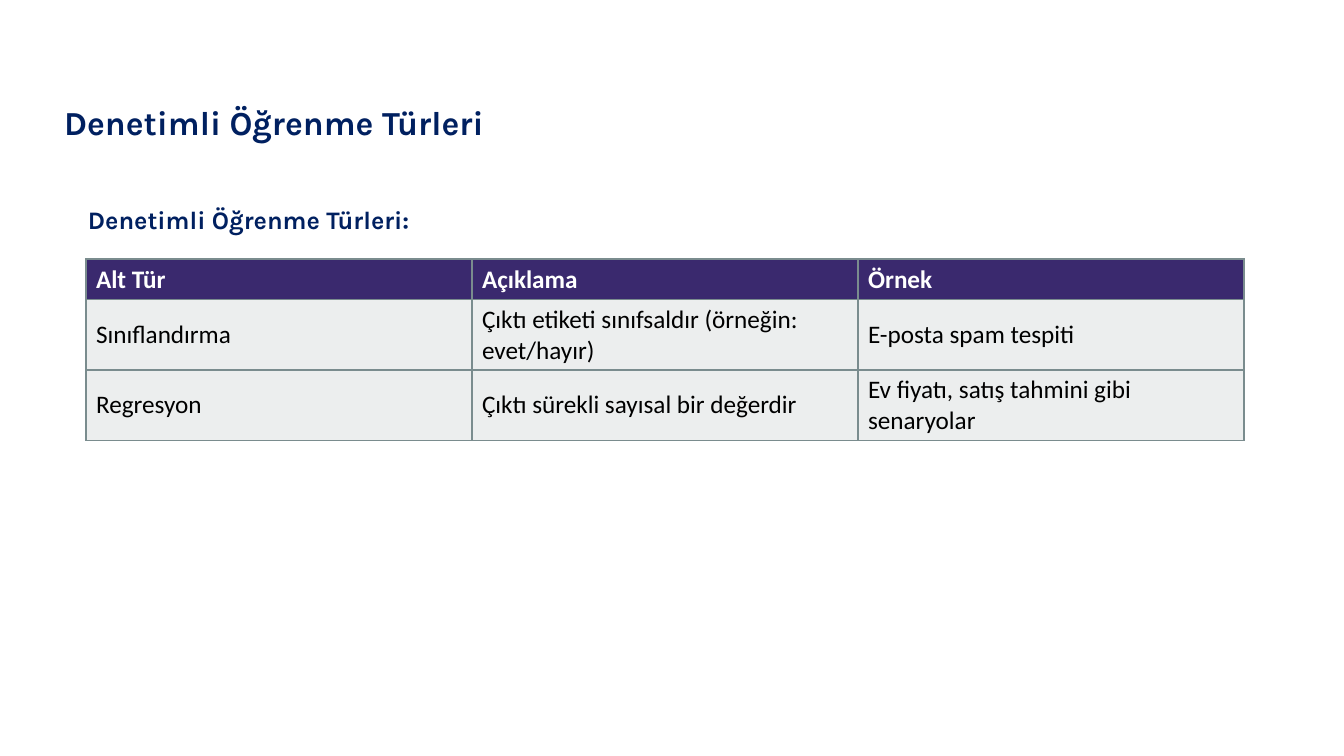
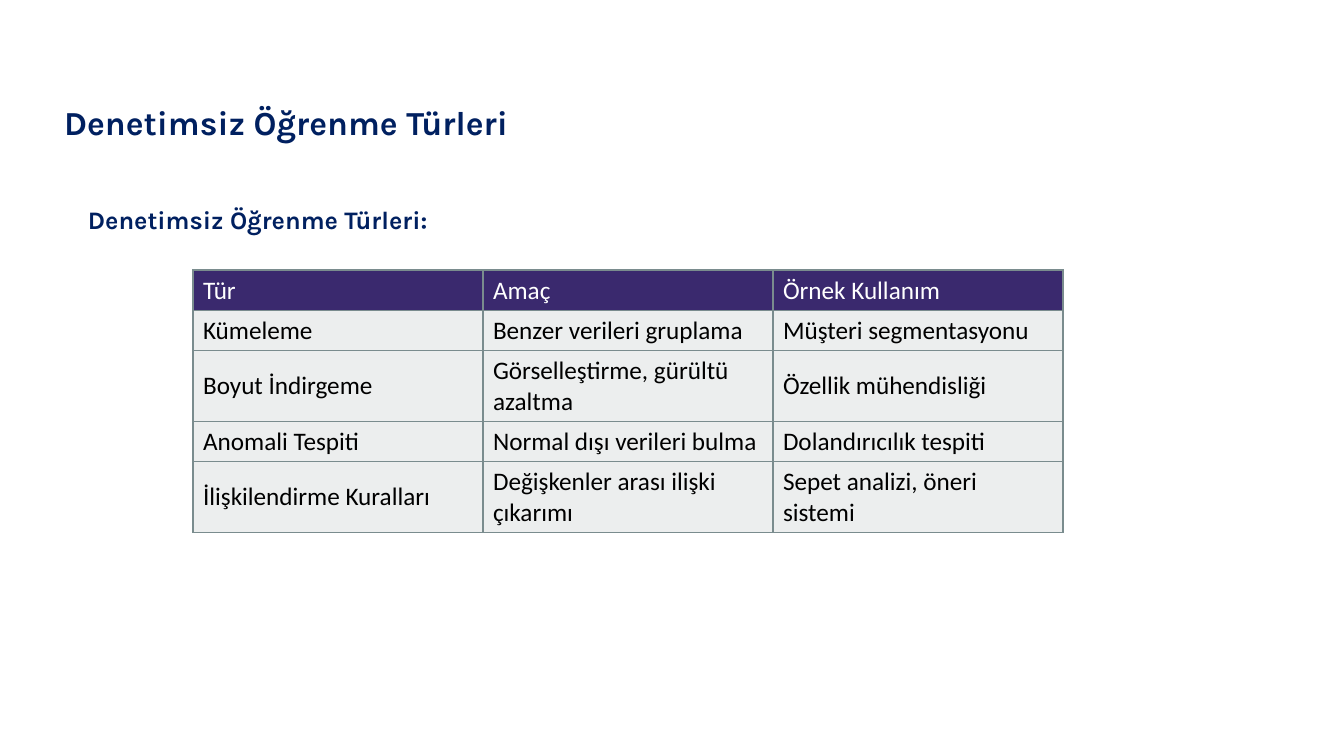
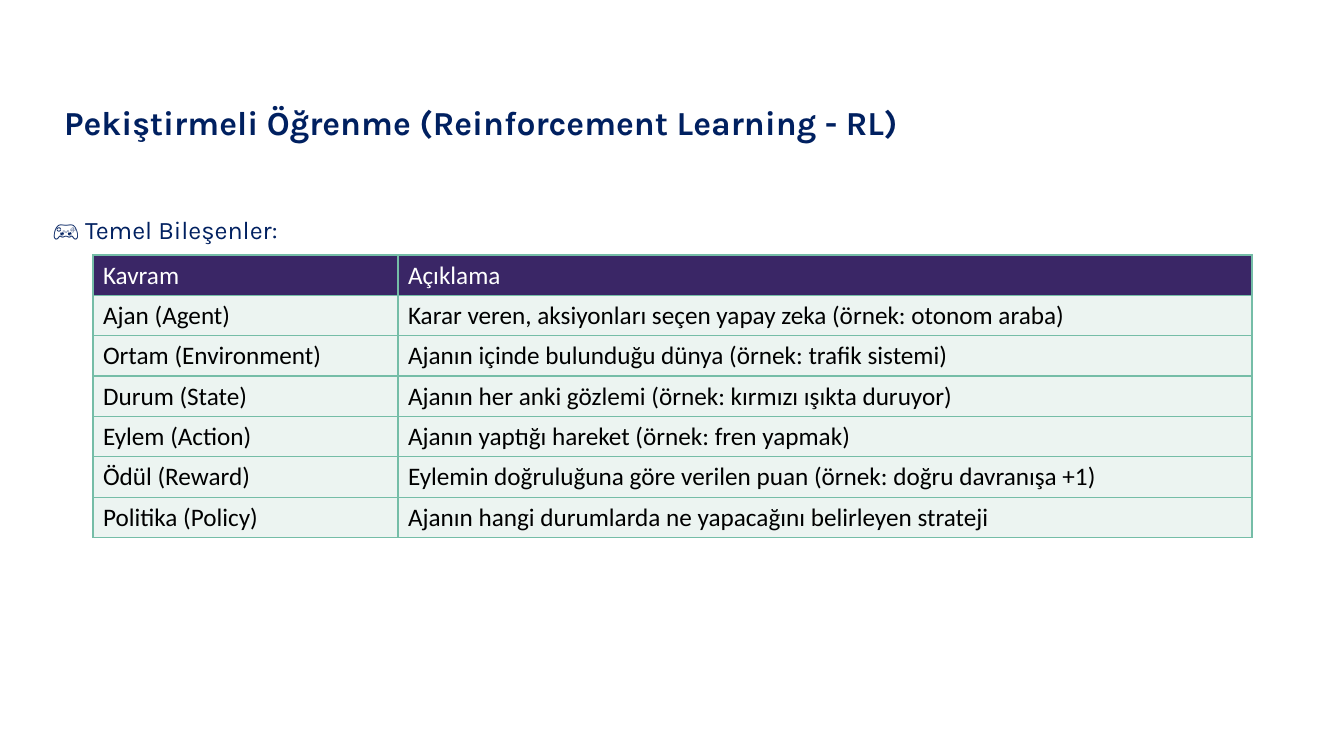
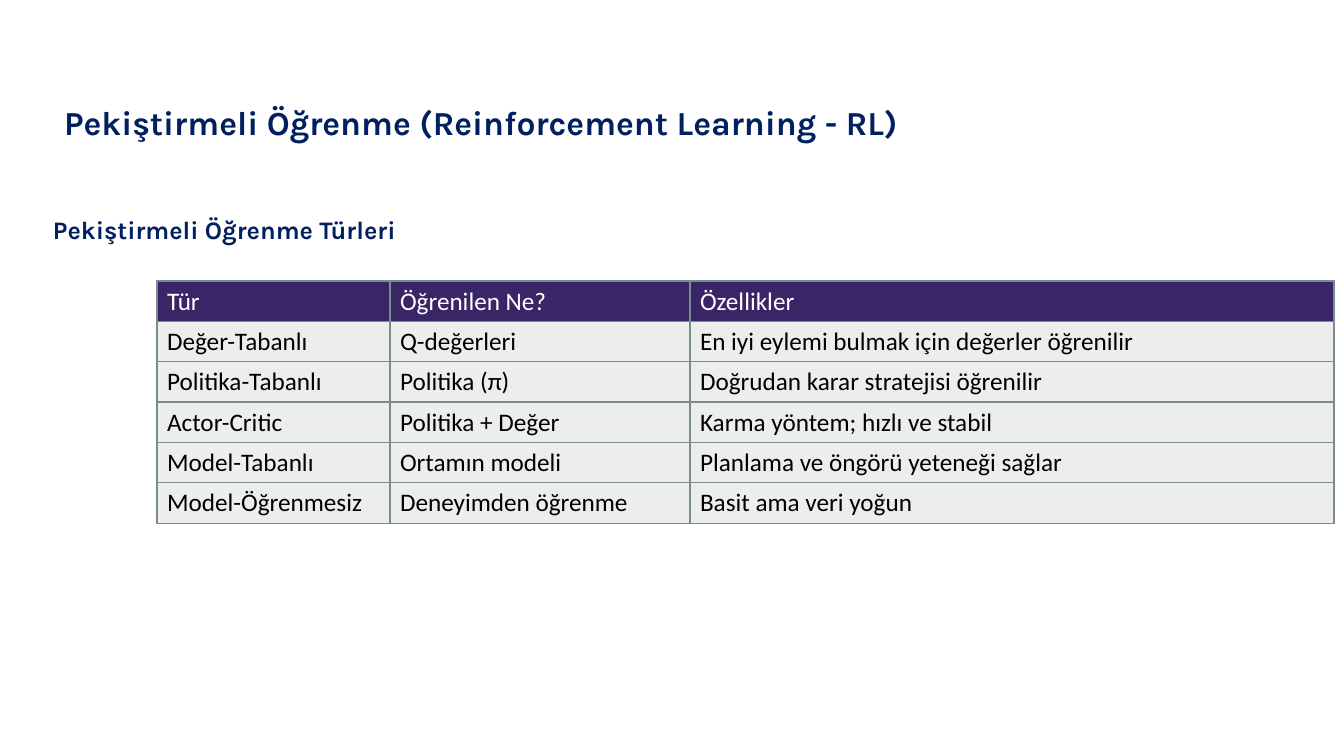
from lxml.etree import SubElement
from pptx import Presentation
from pptx.dml.color import RGBColor
from pptx.enum.text import MSO_ANCHOR as ANCHOR, MSO_AUTO_SIZE as AUTO, PP_ALIGN as ALIGN
from pptx.oxml.ns import qn
from pptx.util import Emu, Pt

NAVY, WHITE, BLACK = "002060", "FFFFFF", "000000"
INDIGO, PLUM = "3A296E", "3A2666"
GREY = ("7A8C8E", "ECEEEE")
GREEN = ("75BDA7", "ECF4F1")


def px(n):
    return Emu(round(n * 914400 / 100.8))


def rgb(value):
    return RGBColor.from_string(value)


class Deck:
    heading_font, table_font = "Karla", "Calibri"
    row_height = 40

    def __init__(self):
        self.prs = Presentation()
        self.prs.slide_width, self.prs.slide_height = px(1344), px(756)

    def style(self, p, font, size, color, bold=False):
        f = p.font
        f.name, f.size, f.bold = font, Pt(size), bold
        f.color.rgb = rgb(color)

    def place(self, shape, x, y, w, h):
        shape.left, shape.top, shape.width, shape.height = map(px, (x, y, w, h))

    def slide(self, title):
        self.s = self.prs.slides.add_slide(self.prs.slide_layouts[5])
        sp = self.s.shapes.title
        self.place(sp, 54, 81, 1256, 88)
        tf = sp.text_frame
        tf.text = title
        tf.auto_size, tf.vertical_anchor = AUTO.NONE, ANCHOR.MIDDLE
        p = tf.paragraphs[0]
        p.alignment, p.line_spacing = ALIGN.LEFT, 0.9
        self.style(p, self.heading_font, 24, NAVY, True)

    def subheading(self, text, x, y, w, h, bold=True, spacing=1.0):
        tf = self.s.shapes.add_textbox(*map(px, (x, y, w, h))).text_frame
        tf.word_wrap = True
        tf.text = text
        p = tf.paragraphs[0]
        p.line_spacing = spacing
        self.style(p, self.heading_font, 18, NAVY, bold)

    def borders(self, cell, color):
        tc_pr = cell._tc.get_or_add_tcPr()
        for side in ("a:lnL", "a:lnR", "a:lnT", "a:lnB"):
            ln = SubElement(tc_pr, qn(side), w=str(Pt(1)))
            fill = SubElement(ln, qn("a:solidFill"))
            SubElement(fill, qn("a:srgbClr"), val=color)

    def table(self, x, y, widths, rows, header_fill, theme=GREY, bold_header=False):
        line, body_fill = theme
        size = (sum(widths), self.row_height * len(rows))
        table = self.s.shapes.add_table(
            len(rows), len(widths), *map(px, (x, y, *size))).table
        table.first_row = table.horz_banding = False
        for column, width in zip(table.columns, widths):
            column.width = px(width)
        for i, row in enumerate(rows):
            header = i == 0
            for cell, text in zip(table.rows[i].cells, row):
                cell.text = text
                cell.vertical_anchor = ANCHOR.MIDDLE
                self.borders(cell, line)
                cell.fill.solid()
                cell.fill.fore_color.rgb = rgb(header_fill if header else body_fill)
                self.style(cell.text_frame.paragraphs[0], self.table_font, 18,
                           WHITE if header else BLACK, header and bold_header)


def main():
    deck = Deck()
    type_box = (78, 199, 380, 40)
    wide_box = (43, 194, 1231, 56)
    rl_title = "Pekiştirmeli Öğrenme (Reinforcement Learning - RL)"

    deck.slide("Denetimli Öğrenme Türleri")
    deck.subheading("Denetimli Öğrenme Türleri:", *type_box)
    deck.table(86, 259, [386] * 3, [
        ("Alt Tür", "Açıklama", "Örnek"),
        ("Sınıflandırma", "Çıktı etiketi sınıfsaldır (örneğin: evet/hayır)",
         "E-posta spam tespiti"),
        ("Regresyon", "Çıktı sürekli sayısal bir değerdir",
         "Ev fiyatı, satış tahmini gibi senaryolar"),
    ], INDIGO, bold_header=True)

    deck.slide("Denetimsiz Öğrenme Türleri")
    deck.subheading("Denetimsiz Öğrenme Türleri:", *type_box)
    deck.table(193, 270, [290] * 3, [
        ("Tür", "Amaç", "Örnek Kullanım"),
        ("Kümeleme", "Benzer verileri gruplama", "Müşteri segmentasyonu"),
        ("Boyut İndirgeme", "Görselleştirme, gürültü azaltma", "Özellik mühendisliği"),
        ("Anomali Tespiti", "Normal dışı verileri bulma", "Dolandırıcılık tespiti"),
        ("İlişkilendirme Kuralları", "Değişkenler arası ilişki çıkarımı",
         "Sepet analizi, öneri sistemi"),
    ], INDIGO)

    deck.slide(rl_title)
    deck.subheading("🎮 Temel Bileşenler:", *wide_box, bold=False, spacing=1.5)
    deck.table(93, 255, [305, 854], [
        ("Kavram", "Açıklama"),
        ("Ajan (Agent)", "Karar veren, aksiyonları seçen yapay zeka (örnek: otonom araba)"),
        ("Ortam (Environment)", "Ajanın içinde bulunduğu dünya (örnek: trafik sistemi)"),
        ("Durum (State)", "Ajanın her anki gözlemi (örnek: kırmızı ışıkta duruyor)"),
        ("Eylem (Action)", "Ajanın yaptığı hareket (örnek: fren yapmak)"),
        ("Ödül (Reward)", "Eylemin doğruluğuna göre verilen puan (örnek: doğru davranışa +1)"),
        ("Politika (Policy)", "Ajanın hangi durumlarda ne yapacağını belirleyen strateji"),
    ], PLUM, GREEN)

    deck.slide(rl_title)
    deck.subheading("Pekiştirmeli Öğrenme Türleri", *wide_box, spacing=1.5)
    deck.table(157, 281, [233, 300, 644], [
        ("Tür", "Öğrenilen Ne?", "Özellikler"),
        ("Değer-Tabanlı", "Q-değerleri", "En iyi eylemi bulmak için değerler öğrenilir"),
        ("Politika-Tabanlı", "Politika (π)", "Doğrudan karar stratejisi öğrenilir"),
        ("Actor-Critic", "Politika + Değer", "Karma yöntem; hızlı ve stabil"),
        ("Model-Tabanlı", "Ortamın modeli", "Planlama ve öngörü yeteneği sağlar"),
        ("Model-Öğrenmesiz", "Deneyimden öğrenme", "Basit ama veri yoğun"),
    ], PLUM)

    deck.prs.save("out.pptx")


if __name__ == "__main__":
    main()
